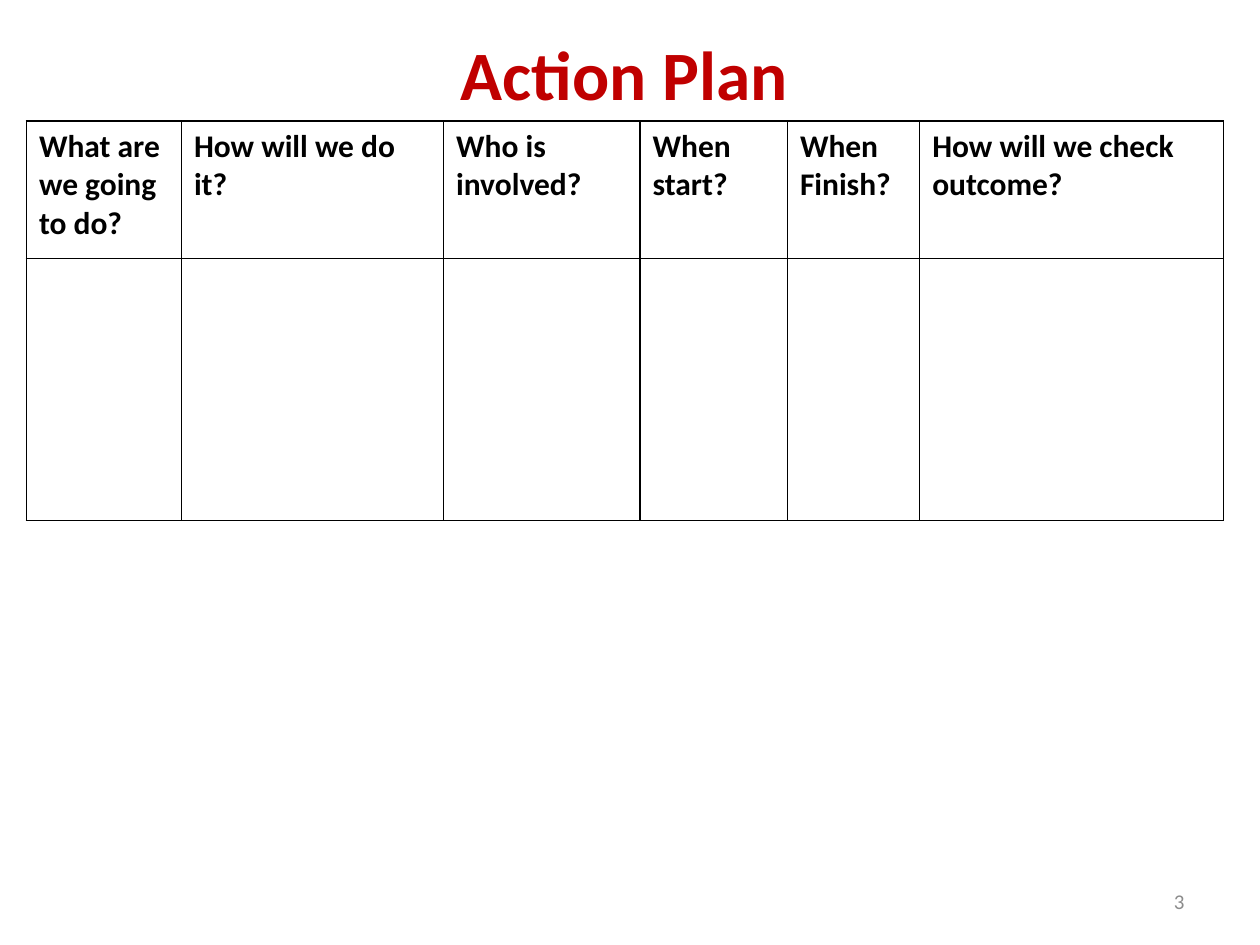
import pptx
import pptx.dml.color
import pptx.enum.text
import pptx.oxml
import pptx.oxml.ns
import pptx.util
from pptx.util import Inches

FONT = "Calibri"
ALIGN = pptx.enum.text.PP_ALIGN
HEADERS = ["What are we going to do?", "How will we do it?", "Who is involved?",
           "When start?", "When Finish?", "How will we check outcome?"]
COL_WIDTHS = [1.23, 2.08, 1.56, 1.17, 1.05, 2.41]
ROW_HEIGHTS = [1.09, 2.08]


def rgb(value):
    """Return the colour for a hex string."""
    return pptx.dml.color.RGBColor.from_string(value)


def write(tf, text, size, color, bold=False, align=ALIGN.LEFT):
    """Write one formatted paragraph into a text frame."""
    p = tf.paragraphs[0]
    p.alignment = align
    r = p.add_run()
    r.text = text
    formats = {"name": FONT, "size": pptx.util.Pt(size), "bold": bold}
    for name, value in formats.items():
        setattr(r.font, name, value)
    r.font.color.rgb = rgb(color)


def set_frame(tf):
    """Make a text frame wrap, keep its size and centre its text vertically."""
    formats = {"word_wrap": True,
               "auto_size": pptx.enum.text.MSO_AUTO_SIZE.NONE,
               "vertical_anchor": pptx.enum.text.MSO_ANCHOR.MIDDLE}
    for name, value in formats.items():
        setattr(tf, name, value)


def add_title(s, left, top, width, height):
    """Place and format the slide title."""
    sp = s.shapes.title
    box = {"left": left, "top": top, "width": width, "height": height}
    for name, value in box.items():
        setattr(sp, name, Inches(value))
    set_frame(sp.text_frame)
    write(sp.text_frame, "Action Plan", 39.6, "C00000", True, ALIGN.CENTER)


def set_borders(cell, color, width):
    """Draw a solid line on all four sides of a cell."""
    tc_pr = cell._tc.get_or_add_tcPr()
    for i, side in enumerate(("lnL", "lnR", "lnT", "lnB")):
        tc_pr.insert(i, pptx.oxml.parse_xml(
            f'<a:{side} {pptx.oxml.ns.nsdecls("a")} w="{pptx.util.Pt(width)}">'
            f'<a:solidFill><a:srgbClr val="{color}"/></a:solidFill></a:{side}>'))


def add_plan_table(s, left, top):
    """Add the action plan table with a header row and an empty row."""
    table = s.shapes.add_table(
        len(ROW_HEIGHTS), len(COL_WIDTHS), Inches(left), Inches(top),
        Inches(sum(COL_WIDTHS)), Inches(sum(ROW_HEIGHTS))).table
    table.horz_banding = False
    for column, width in zip(table.columns, COL_WIDTHS):
        column.width = Inches(width)
    for row, height in zip(table.rows, ROW_HEIGHTS):
        row.height = Inches(height)
    for cell in table.iter_cells():
        cell.fill.solid()
        cell.fill.fore_color.rgb = rgb("FFFFFF")
        set_borders(cell, "000000", 1)
    for cell, text in zip(table.rows[0].cells, HEADERS):
        write(cell.text_frame, text, 18, "000000", True)


def add_page_number(s, left, top, width, height):
    """Add the right-aligned page number."""
    sp = s.shapes.add_textbox(*map(Inches, (left, top, width, height)))
    set_frame(sp.text_frame)
    write(sp.text_frame, "3", 12, "8C8C8C", align=ALIGN.RIGHT)


def main():
    """Build the action plan slide and save it."""
    prs = pptx.Presentation()
    prs.slide_width, prs.slide_height = Inches(10), Inches(7.5)
    s = prs.slides.add_slide(prs.slide_layouts.get_by_name("Title Only"))
    add_title(s, 1.58, 0.23, 6.75, 0.7)
    add_plan_table(s, 0.21, 0.96)
    add_page_number(s, 7.17, 6.95, 2.33, 0.4)
    prs.save("out.pptx")


if __name__ == "__main__":
    main()
